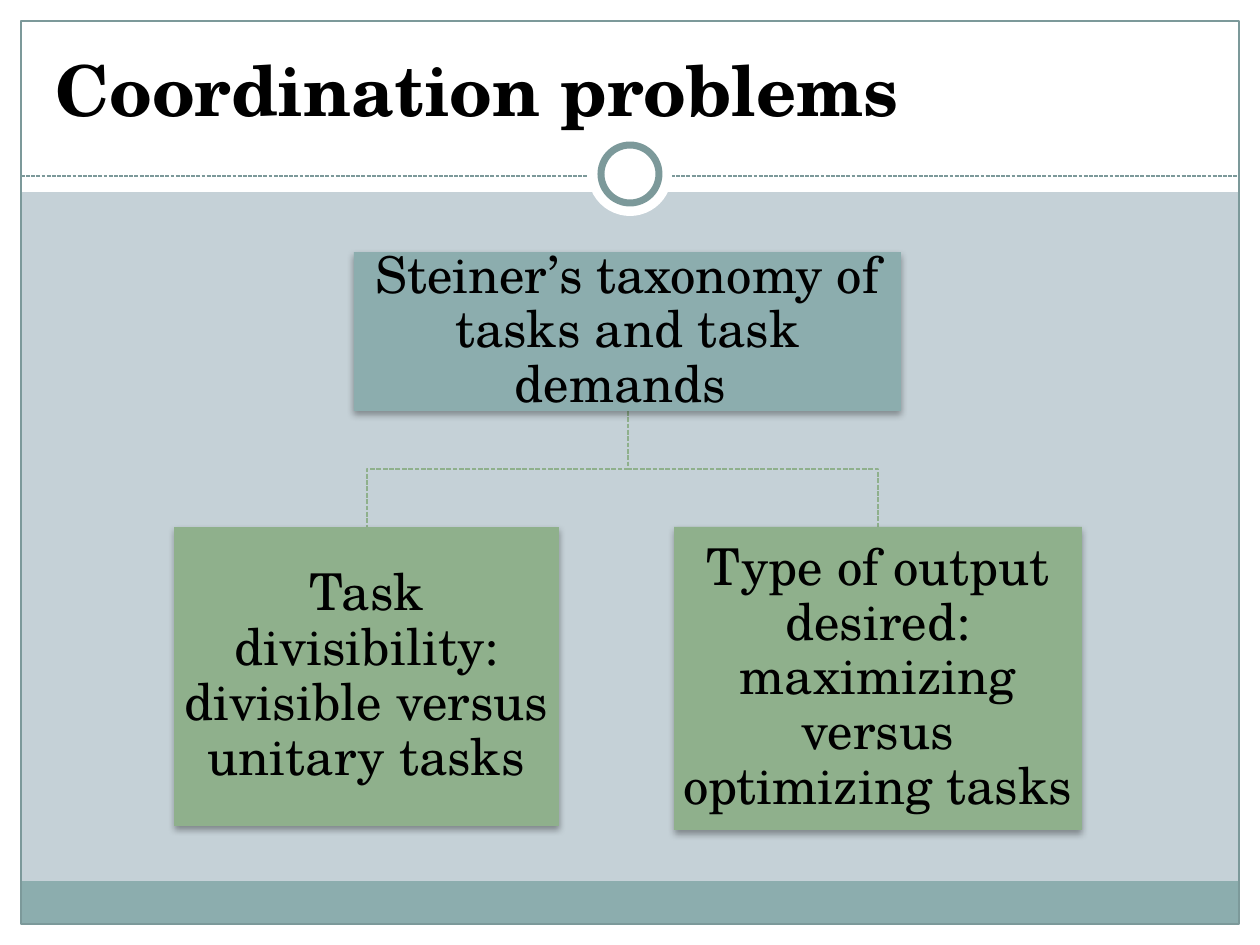
"""Build the "Coordination problems" slide with a two-branch task taxonomy."""
from lxml import etree
from pptx import Presentation
from pptx.dml.color import RGBColor
from pptx.enum.dml import MSO_LINE
from pptx.enum.shapes import MSO_CONNECTOR, MSO_SHAPE
from pptx.enum.text import MSO_ANCHOR, PP_ALIGN
from pptx.oxml.ns import qn
from pptx.util import Inches, Pt

PX = Inches(10) / 1260
FONT = "TeX Gyre Schola"
WHITE = RGBColor(0xFF, 0xFF, 0xFF)
BLACK = RGBColor(0x00, 0x00, 0x00)
MIST = RGBColor(0xC5, 0xD1, 0xD7)
TEAL = RGBColor(0x8C, 0xAD, 0xAE)
DARK_TEAL = RGBColor(0x7C, 0x99, 0x9A)
GREEN = RGBColor(0x8F, 0xB0, 0x8C)
RECTANGLE, OVAL = MSO_SHAPE.RECTANGLE, MSO_SHAPE.OVAL
STRAIGHT = MSO_CONNECTOR.STRAIGHT
DASH = MSO_LINE.SQUARE_DOT
LEFT, CENTER = PP_ALIGN.LEFT, PP_ALIGN.CENTER
MIDDLE, BOTTOM = MSO_ANCHOR.MIDDLE, MSO_ANCHOR.BOTTOM


def add_panel(bounds, kind=RECTANGLE, fill=None, line=None, width=0.75):
    panel = page.shapes.add_shape(kind, *[int(v * PX) for v in bounds])
    panel.shadow.inherit = False
    if fill is None:
        panel.fill.background()
    else:
        panel.fill.solid()
        panel.fill.fore_color.rgb = fill
    if line is None:
        panel.line.fill.background()
    else:
        panel.line.color.rgb = line
        panel.line.width = Pt(width)
    return panel


def write_text(box, text, size, bold=False, align=CENTER, anchor=MIDDLE, inset=3, spacing=0.9):
    frame = box.text_frame
    frame.word_wrap = True
    frame.vertical_anchor = anchor
    frame.margin_left = frame.margin_right = int(inset * PX)
    frame.margin_top = frame.margin_bottom = int(min(inset, 6) * PX)
    para = frame.paragraphs[0]
    para.alignment = align
    para.line_spacing = spacing
    span = para.add_run()
    span.text = text
    span.font.name = FONT
    span.font.size = Pt(size)
    span.font.bold = bold
    span.font.color.rgb = BLACK


deck = Presentation()
deck.slide_width, deck.slide_height = Inches(10), Inches(7.5)
page = deck.slides.add_slide(deck.slide_layouts[6])
page.background.fill.solid()
page.background.fill.fore_color.rgb = MIST

for bounds in [(0, 924, 1260, 21), (0, 0, 1260, 192), (0, 0, 21, 945), (1239, 0, 21, 945)]:
    add_panel(bounds, fill=WHITE)
add_panel((21, 881, 1217, 43), fill=TEAL)
add_panel((21, 21, 1218, 903), line=DARK_TEAL)

divider = page.shapes.add_connector(STRAIGHT, *[int(v * PX) for v in (21, 176, 1239, 176)])
divider.line.color.rgb = DARK_TEAL
divider.line.width = Pt(0.75)
divider.line.dash_style = DASH
etree.SubElement(divider.element.spPr, qn("a:effectLst"))

add_panel((588, 132, 84, 84), OVAL, fill=WHITE)
add_panel((601, 145, 58, 58), OVAL, fill=WHITE, line=DARK_TEAL, width=4)

title = page.shapes.add_textbox(*[int(v * PX) for v in (42, 32, 1176, 104)])
write_text(title, "Coordination problems", 40, bold=True, align=LEFT, anchor=BOTTOM, inset=13, spacing=1.0)

for branch_x in (878, 367):
    builder = page.shapes.build_freeform(628, 411, scale=PX)
    builder.add_line_segments([(628, 469), (branch_x, 469), (branch_x, 527)], close=False)
    branch = builder.convert_to_shape()
    branch.shadow.inherit = False
    branch.fill.background()
    branch.line.color.rgb = GREEN
    branch.line.width = Pt(0.9)
    branch.line.dash_style = DASH

for text, bounds, color in [
    ("Steiner’s taxonomy of tasks and task demands ", (354, 252, 547, 159), TEAL),
    ("Task divisibility: divisible versus unitary tasks", (174, 527, 385, 299), GREEN),
    ("Type of output desired: maximizing versus optimizing tasks ", (674, 527, 408, 303), GREEN),
]:
    box = add_panel(bounds, fill=color)
    write_text(box, text, 29)
    effects = box.element.spPr.find(qn("a:effectLst"))
    shadow = etree.SubElement(effects, qn("a:outerShdw"), blurRad=str(Pt(4)), dist=str(Pt(2)),
                              dir="5400000", rotWithShape="0")
    shade = etree.SubElement(shadow, qn("a:srgbClr"), val=str(BLACK))
    etree.SubElement(shade, qn("a:alpha"), val="35000")

deck.save("out.pptx")
